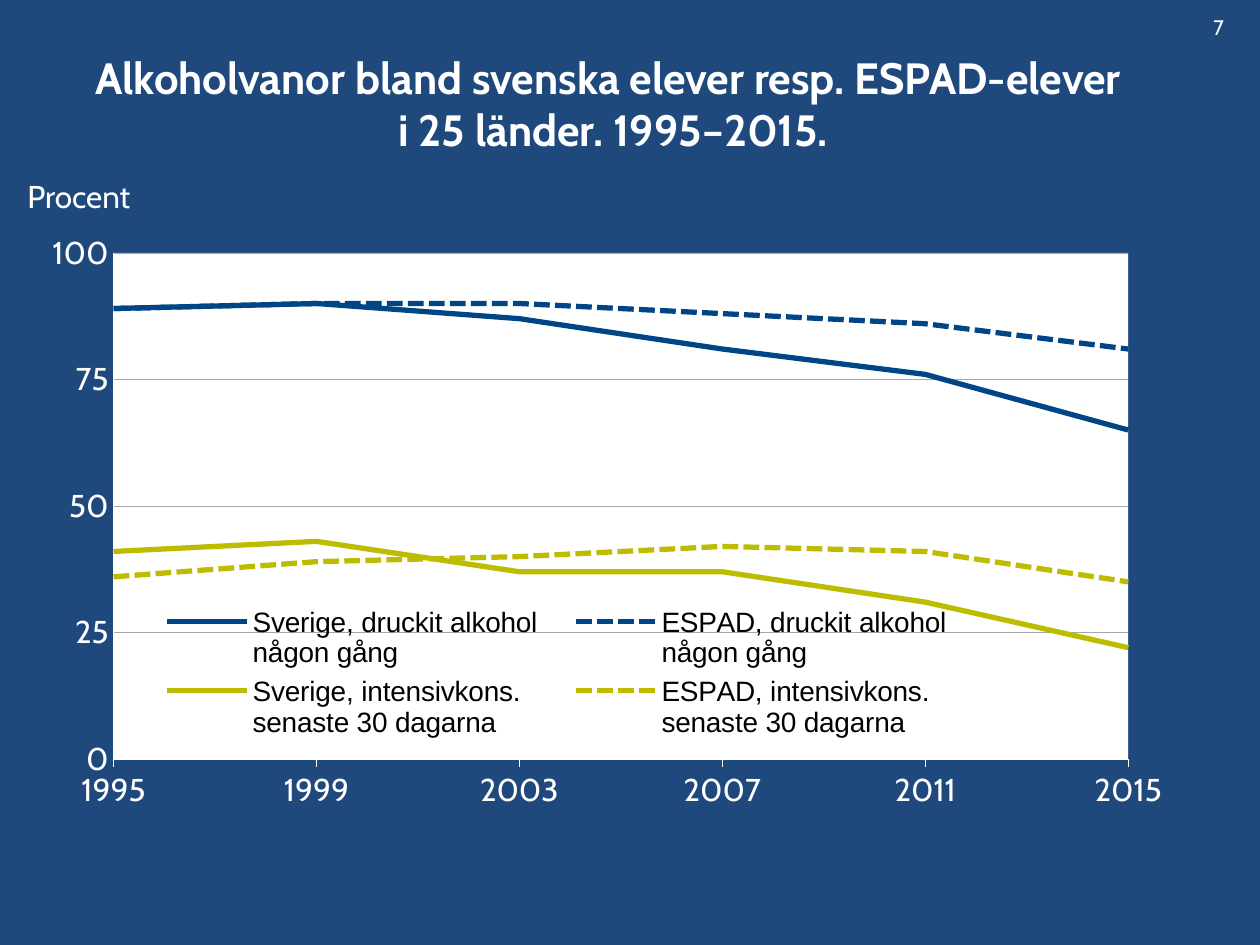
from lxml import etree
from pptx import Presentation
from pptx import util as u
from pptx.chart.data import CategoryChartData
from pptx.dml.color import RGBColor
from pptx.enum import chart as ch, dml, text
from pptx.oxml import parse_xml
from pptx.oxml.ns import nsdecls, qn

PX = 914400 // 126
NAVY, WHITE, BLACK, GREY = "1F497D", "FFFFFF", "000000", "A6A6A6"
BLUE, LIME = "004687", "BEBC00"

# text, box in px, format values, anchor, alignment
TEXTS = [
    ("Alkoholvanor bland svenska elever resp. ESPAD-elever \vi 25 länder. 1995–2015.",
     (29, 38, 1168, 130), {"size": u.Pt(25), "bold": True}, "MIDDLE", "CENTER"),
    ("Procent", (15, 171, 147, 50), {"size": u.Pt(18)}, "MIDDLE", "LEFT"),
    ("7", (1201, 8, 59, 38), {"size": u.Pt(12)}, "TOP", "LEFT"),
]
YEARS = ["1995", "1999", "2003", "2007", "2011", "2015"]
# name, values, colour, dashed
SERIES = [
    ("Sverige, druckit alkohol\nnågon gång", (89, 90, 87, 81, 76, 65), BLUE, False),
    ("ESPAD, druckit alkohol\nnågon gång", (89, 90, 90, 88, 86, 81), BLUE, True),
    ("Sverige, intensivkons.\nsenaste 30 dagarna", (41, 43, 37, 37, 31, 22), LIME, False),
    ("ESPAD, intensivkons.\nsenaste 30 dagarna", (36, 39, 40, 42, 41, 35), LIME, True),
]
CHART_BOX = (49, 197, 1113, 636)
PLOT_BOX = (114, 253, 1015, 506)
LEGEND_BOX = (138, 598, 838, 148)


def rgb(value):
    return RGBColor.from_string(value)


def px(values):
    return [value * PX for value in values]


def style_font(font, color, **values):
    for name, value in values.items():
        setattr(font, name, value)
    font.color.rgb = rgb(color)


def style_line(line, color, width):
    line.color.rgb = rgb(color)
    line.width = u.Pt(width)


def add_text(page, words, place, values, anchor, align):
    box = page.shapes.add_textbox(*px(place))
    frame = box.text_frame
    frame.word_wrap = True
    frame.vertical_anchor = getattr(text.MSO_ANCHOR, anchor)
    para = frame.paragraphs[0]
    para.text = words
    para.alignment = getattr(text.PP_ALIGN, align)
    for span in para.runs:
        style_font(span.font, WHITE, name="Cabin", **values)


def manual_layout(place, inner=False):
    """Return a c:layout placing a chart part by its page position in px."""
    left, top, width, height = CHART_BOX
    x, y, w, h = place
    layout = parse_xml(f"<c:layout {nsdecls('c')}><c:manualLayout/></c:layout>")
    values = [("layoutTarget", "inner")] if inner else []
    values += [("xMode", "edge"), ("yMode", "edge"),
               ("x", (x - left) / width), ("y", (y - top) / height),
               ("w", w / width), ("h", h / height)]
    for name, value in values:
        shown = value if isinstance(value, str) else f"{value:.3f}"
        etree.SubElement(layout[0], qn(f"c:{name}")).set("val", shown)
    return layout


def set_layout(part, layout, after=None):
    for old in part.findall(qn("c:layout")):
        part.remove(old)
    if after is None:
        part.insert(0, layout)
    else:
        part.find(qn(after)).addnext(layout)


def add_line_chart(page):
    data = CategoryChartData(number_format="0")
    data.categories = YEARS
    for name, values, _, _ in SERIES:
        data.add_series(name, values)
    chart = page.shapes.add_chart(ch.XL_CHART_TYPE.LINE, *px(CHART_BOX), data).chart
    chart.has_title = False
    style_font(chart.font, WHITE, name="Cabin", size=u.Pt(18), bold=False)
    plot = chart.plots[0]
    plot.vary_by_categories = False
    for series, (_, _, color, dashed) in zip(plot.series, SERIES):
        series.smooth = False
        series.marker.style = ch.XL_MARKER_STYLE.NONE
        style_line(series.format.line, color, 3)
        if dashed:
            series.format.line.dash_style = dml.MSO_LINE.SQUARE_DOT

    years, percent = chart.category_axis, chart.value_axis
    for axis, tick, width in ((years, "OUTSIDE", 0.75), (percent, "NONE", 0.23)):
        axis.major_tick_mark = getattr(ch.XL_TICK_MARK, tick)
        axis.minor_tick_mark = ch.XL_TICK_MARK.NONE
        style_line(axis.format.line, WHITE, width)
        style_font(axis.tick_labels.font, WHITE, name="Cabin", size=u.Pt(18), bold=False)
    percent.minimum_scale, percent.maximum_scale, percent.major_unit = 0, 100, 25
    percent.has_major_gridlines = True
    style_line(percent.major_gridlines.format.line, GREY, 0.23)
    area = chart.element.chart.plotArea
    area.find(".//" + qn("c:majorUnit")).addprevious(
        parse_xml(f"<c:crossBetween {nsdecls('c')} val='midCat'/>"))
    set_layout(area, manual_layout(PLOT_BOX, inner=True))
    area.append(parse_xml(
        f"<c:spPr {nsdecls('c', 'a')}><a:solidFill><a:srgbClr val='{WHITE}'/>"
        "</a:solidFill><a:ln><a:noFill/></a:ln></c:spPr>"))

    chart.has_legend = True
    legend = chart.legend
    legend.position = ch.XL_LEGEND_POSITION.RIGHT
    legend.include_in_layout = True
    style_font(legend.font, BLACK, name="Arial", size=u.Pt(16), bold=False)
    set_layout(area.getnext(), manual_layout(LEGEND_BOX), after="c:legendPos")


def main():
    deck = Presentation()
    deck.slide_width, deck.slide_height = px((1260, 945))
    page = deck.slides.add_slide(deck.slide_layouts[6])
    page.background.fill.solid()
    page.background.fill.fore_color.rgb = rgb(NAVY)
    add_line_chart(page)
    for item in TEXTS:
        add_text(page, *item)
    deck.save("out.pptx")


if __name__ == "__main__":
    main()
